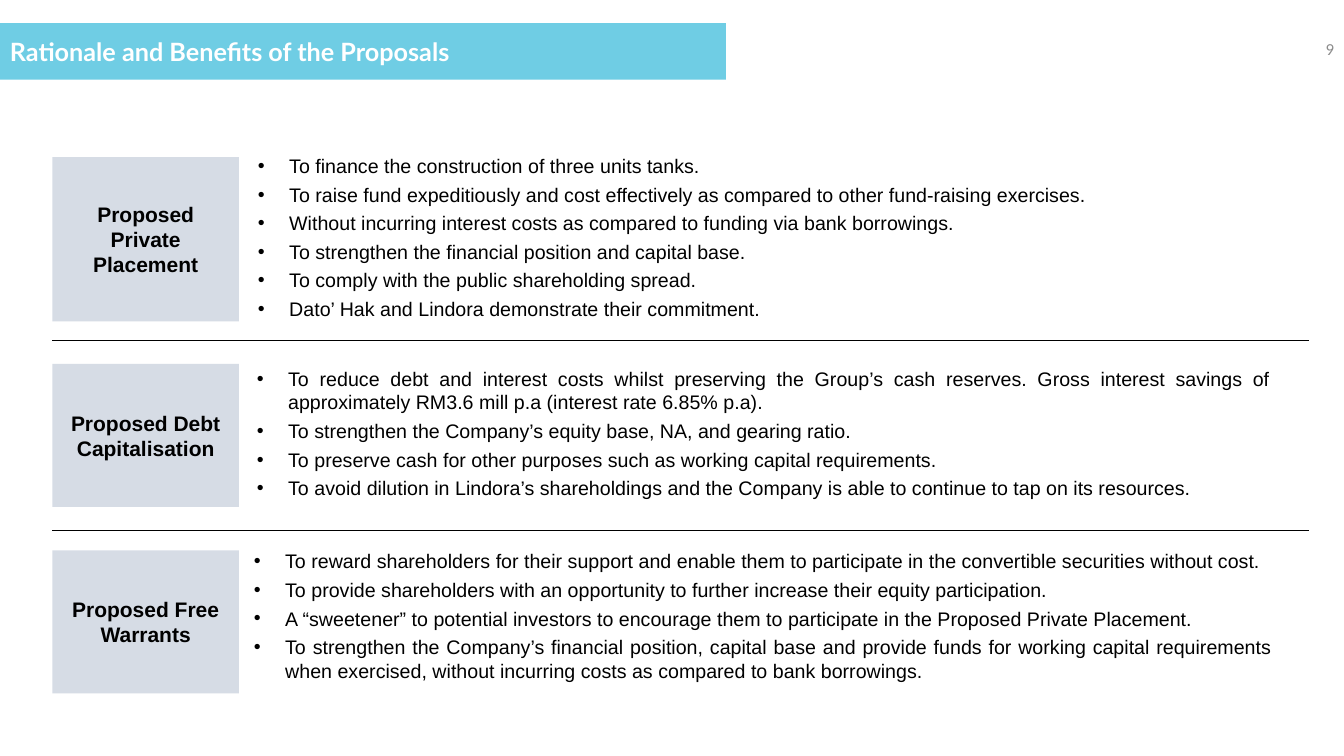
from lxml import etree
from pptx import Presentation
from pptx.dml.color import RGBColor
from pptx.enum.shapes import MSO_CONNECTOR, MSO_SHAPE
from pptx.enum.text import MSO_ANCHOR, PP_ALIGN
from pptx.oxml.ns import qn
from pptx.util import Inches, Pt

RECTANGLE = MSO_SHAPE.RECTANGLE
STRAIGHT = MSO_CONNECTOR.STRAIGHT
MIDDLE, TOP = MSO_ANCHOR.MIDDLE, MSO_ANCHOR.TOP
LEFT, CENTER, RIGHT, JUSTIFY = PP_ALIGN.LEFT, PP_ALIGN.CENTER, PP_ALIGN.RIGHT, PP_ALIGN.JUSTIFY

COLORS = {
    "banner": "6FCDE4",
    "label": "D6DCE5",
    "white": "FFFFFF",
    "black": "000000",
    "page_number": "8C8C8C",
}

# Label, label top and height, bullet box (left, top, width, height), bullets
PROPOSALS = [
    ("Proposed Private Placement", 1.56, 1.63, (2.45, 1.48, 10.11, 1.8), [
        "To finance the construction of three units tanks.",
        "To raise fund expeditiously and cost effectively as compared to other fund-raising exercises.",
        "Without incurring interest costs as compared to funding via bank borrowings.",
        "To strengthen the financial position and capital base.",
        "To comply with the public shareholding spread.",
        "Dato’ Hak and Lindora demonstrate their commitment.",
    ]),
    ("Proposed Debt Capitalisation", 3.61, 1.42, (2.44, 3.59, 10.26, 1.45), [
        "To reduce debt and interest costs whilst preserving the Group’s cash reserves. "
        "Gross interest savings of approximately RM3.6 mill p.a (interest rate 6.85% p.a).",
        "To strengthen the Company’s equity base, NA, and gearing ratio.",
        "To preserve cash for other purposes such as working capital requirements.",
        "To avoid dilution in Lindora’s shareholdings and the Company is able to continue "
        "to tap on its resources.",
    ]),
    ("Proposed Free Warrants", 5.46, 1.42, (2.41, 5.4, 10.31, 1.45), [
        "To reward shareholders for their support and enable them to participate in the "
        "convertible securities without cost.",
        "To provide shareholders with an opportunity to further increase their equity participation.",
        "A “sweetener” to potential investors to encourage them to participate in the "
        "Proposed Private Placement.",
        "To strengthen the Company’s financial position, capital base and provide funds for "
        "working capital requirements when exercised, without incurring costs as compared "
        "to bank borrowings.",
    ]),
]
DIVIDER_TOPS = [3.38, 5.26]


class SlideBuilder:
    """Holds the current slide and draws its elements in one style."""

    def __init__(self, slide):
        self.slide = slide

    def color(self, name):
        return RGBColor.from_string(COLORS[name])

    def style(self, para, size, color, font="Arial", bold=False, align=LEFT):
        para.alignment = align
        para.font.name = font
        para.font.size = Pt(size)
        para.font.bold = bold
        para.font.color.rgb = self.color(color)

    def set_text(self, shape, text, **style):
        frame = shape.text_frame
        frame.word_wrap = True
        frame.vertical_anchor = MIDDLE
        frame.text = text
        self.style(frame.paragraphs[0], **style)

    def block(self, place, fill, text, **style):
        """Draw a filled rectangle with vertically centred text."""
        shape = self.slide.shapes.add_shape(RECTANGLE, *map(Inches, place))
        shape.shadow.inherit = False
        shape.fill.solid()
        shape.fill.fore_color.rgb = self.color(fill)
        shape.line.fill.background()
        self.set_text(shape, text, **style)

    def text(self, place, text, **style):
        box = self.slide.shapes.add_textbox(*map(Inches, place))
        self.set_text(box, text, **style)

    def bullets(self, place, items):
        box = self.slide.shapes.add_textbox(*map(Inches, place))
        frame = box.text_frame
        frame.word_wrap = True
        frame.vertical_anchor = TOP
        for index, item in enumerate(items):
            para = frame.paragraphs[0] if index == 0 else frame.add_paragraph()
            para.text = item
            para.space_before = Pt(3.6 if index else 0)
            properties = para._p.get_or_add_pPr()
            properties.set("marL", str(Inches(0.32)))
            properties.set("indent", str(Inches(-0.31)))
            etree.SubElement(properties, qn("a:buFont"), typeface="Arial")
            etree.SubElement(properties, qn("a:buChar"), char="•")
            self.style(para, 14, "black", align=JUSTIFY)

    def divider(self, left, right, top):
        line = self.slide.shapes.add_connector(
            STRAIGHT, Inches(left), Inches(top), Inches(right), Inches(top))
        line.line.color.rgb = self.color("black")
        line.line.width = Pt(0.5)
        etree.SubElement(line._element.spPr, qn("a:effectLst"))


def main():
    deck = Presentation()
    deck.slide_width, deck.slide_height = Inches(13.33), Inches(7.5)
    page = SlideBuilder(deck.slides.add_slide(deck.slide_layouts[6]))

    page.block((0, 0.23, 7.2, 0.56), "banner", "Rationale and Benefits of the Proposals",
               size=18, color="white", font="Lato", bold=True)
    page.text((10.33, 0.28, 3, 0.4), "9",
              size=12, color="page_number", font="Calibri", align=RIGHT)
    for label, top, height, bullet_place, items in PROPOSALS:
        page.block((0.52, top, 1.85, height), "label", label,
                   size=15, color="black", bold=True, align=CENTER)
        page.bullets(bullet_place, items)
    for top in DIVIDER_TOPS:
        page.divider(0.52, 12.98, top)

    deck.save("out.pptx")


if __name__ == "__main__":
    main()
